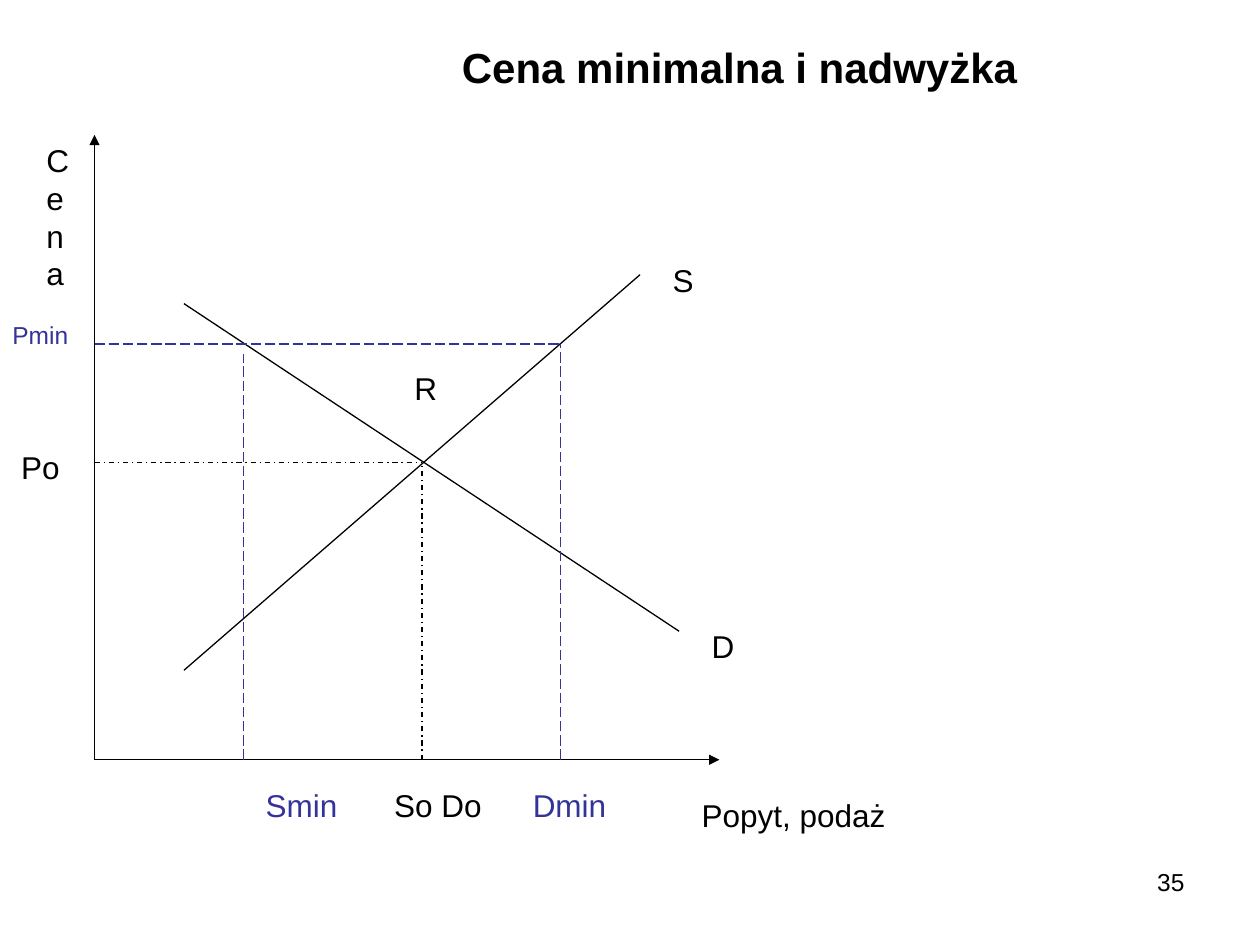
from dataclasses import dataclass
from typing import Optional

from lxml import etree
from pptx import Presentation
from pptx.dml.color import RGBColor
from pptx.enum.dml import MSO_LINE
from pptx.enum.shapes import MSO_CONNECTOR
from pptx.enum.text import MSO_ANCHOR, MSO_AUTO_SIZE, PP_ALIGN
from pptx.oxml.ns import qn
from pptx.util import Inches, Pt

STRAIGHT = MSO_CONNECTOR.STRAIGHT
DASH_DOT, LONG_DASH = MSO_LINE.DASH_DOT, MSO_LINE.LONG_DASH
LEFT, CENTER, RIGHT = PP_ALIGN.LEFT, PP_ALIGN.CENTER, PP_ALIGN.RIGHT
TITLE_ONLY = 5


@dataclass(frozen=True)
class Theme:
    font: str = "Arial"
    ink: RGBColor = RGBColor(0x00, 0x00, 0x00)
    accent: RGBColor = RGBColor(0x33, 0x33, 0x99)
    title: int = 24
    label: int = 18
    small: int = 14
    line: float = 0.75


THEME = Theme()


@dataclass(frozen=True)
class Label:
    text: str
    left: float
    top: float
    width: float
    height: float = 0.4
    size: int = THEME.label
    color: RGBColor = THEME.ink
    align: PP_ALIGN = LEFT


@dataclass(frozen=True)
class Line:
    x1: float
    y1: float
    x2: float
    y2: float
    color: RGBColor = THEME.ink
    dash: Optional[MSO_LINE] = None
    arrow: bool = False


# Chart geometry: axes origin, price levels and quantities
X0, Y0 = 0.75, 6.03
P_MIN, P_EQ = 2.73, 3.67
Q_SUPPLY, Q_EQ, Q_DEMAND = 1.93, 3.35, 4.45
QUANTITY_TOP = 6.19

LINES = [
    Line(X0, Y0, X0, 1.07, arrow=True),
    Line(X0, Y0, 5.71, Y0, arrow=True),
    Line(1.46, 5.32, 5.08, 2.18),
    Line(1.46, 2.41, 5.39, 5.01),
    Line(X0, P_EQ, Q_EQ, P_EQ, dash=DASH_DOT),
    Line(Q_EQ, Y0, Q_EQ, P_EQ, dash=DASH_DOT),
    Line(X0, P_MIN, Q_DEMAND, P_MIN, THEME.accent, LONG_DASH),
    Line(Q_SUPPLY, Y0, Q_SUPPLY, 2.81, THEME.accent, LONG_DASH),
    Line(Q_DEMAND, Y0, Q_DEMAND, P_MIN, THEME.accent, LONG_DASH),
]

LABELS = [
    Label("Po", 0.07, 3.51, 0.59),
    Label("Pmin", 0, 2.49, 0.75, 0.33, THEME.small, THEME.accent),
    Label("Cena", 0.27, 1.07, 0.32, 1.3),  # narrow: one letter per line
    Label("Popyt, podaż", 5.47, 6.27, 2.13),
    Label("S", 5.24, 2.02, 0.47),
    Label("D", 5.55, 4.93, 0.55),
    Label("R", 3.19, 2.88, 0.39),
    Label("So Do", 3.03, QUANTITY_TOP, 0.94),
    Label("Smin", 2.01, QUANTITY_TOP, 0.87, color=THEME.accent),
    Label("Dmin", 4.13, QUANTITY_TOP, 1.18, color=THEME.accent),
    Label("35", 7.17, 6.83, 2.33, 0.52, THEME.small, align=RIGHT),
]

TITLE = Label("Cena minimalna i nadwyżka", 2.76, 0.28, 6.22, 0.5, THEME.title, align=CENTER)


def write_text(sp, label: Label, bold: bool = False) -> None:
    tf = sp.text_frame
    frame_format = {"word_wrap": True, "auto_size": MSO_AUTO_SIZE.NONE,
                    "vertical_anchor": MSO_ANCHOR.TOP}
    for name, value in frame_format.items():
        setattr(tf, name, value)
    p = tf.paragraphs[0]
    p.alignment = label.align
    r = p.add_run()
    r.text = label.text
    font_format = {"name": THEME.font, "size": Pt(label.size), "bold": bold}
    for name, value in font_format.items():
        setattr(r.font, name, value)
    r.font.color.rgb = label.color


def add_label(s, label: Label) -> None:
    box = (label.left, label.top, label.width, label.height)
    write_text(s.shapes.add_textbox(*map(Inches, box)), label)


def add_title(s, label: Label) -> None:
    sp = s.shapes.title
    for name in ("left", "top", "width", "height"):
        setattr(sp, name, Inches(getattr(label, name)))
    write_text(sp, label, bold=True)


def add_line(s, line: Line) -> None:
    ends = (line.x1, line.y1, line.x2, line.y2)
    sp = s.shapes.add_connector(STRAIGHT, *map(Inches, ends))
    sp.line.color.rgb = line.color
    sp.line.width = Pt(THEME.line)
    if line.dash is not None:
        sp.line.dash_style = line.dash
    if line.arrow:
        etree.SubElement(sp.line._get_or_add_ln(), qn("a:tailEnd"), type="triangle")
    etree.SubElement(sp._element.spPr, qn("a:effectLst"))


def main() -> None:
    prs = Presentation()
    prs.slide_width, prs.slide_height = Inches(10), Inches(7.5)
    s = prs.slides.add_slide(prs.slide_layouts[TITLE_ONLY])
    add_title(s, TITLE)
    for line in LINES:
        add_line(s, line)
    for label in LABELS:
        add_label(s, label)
    prs.save("out.pptx")


if __name__ == "__main__":
    main()
